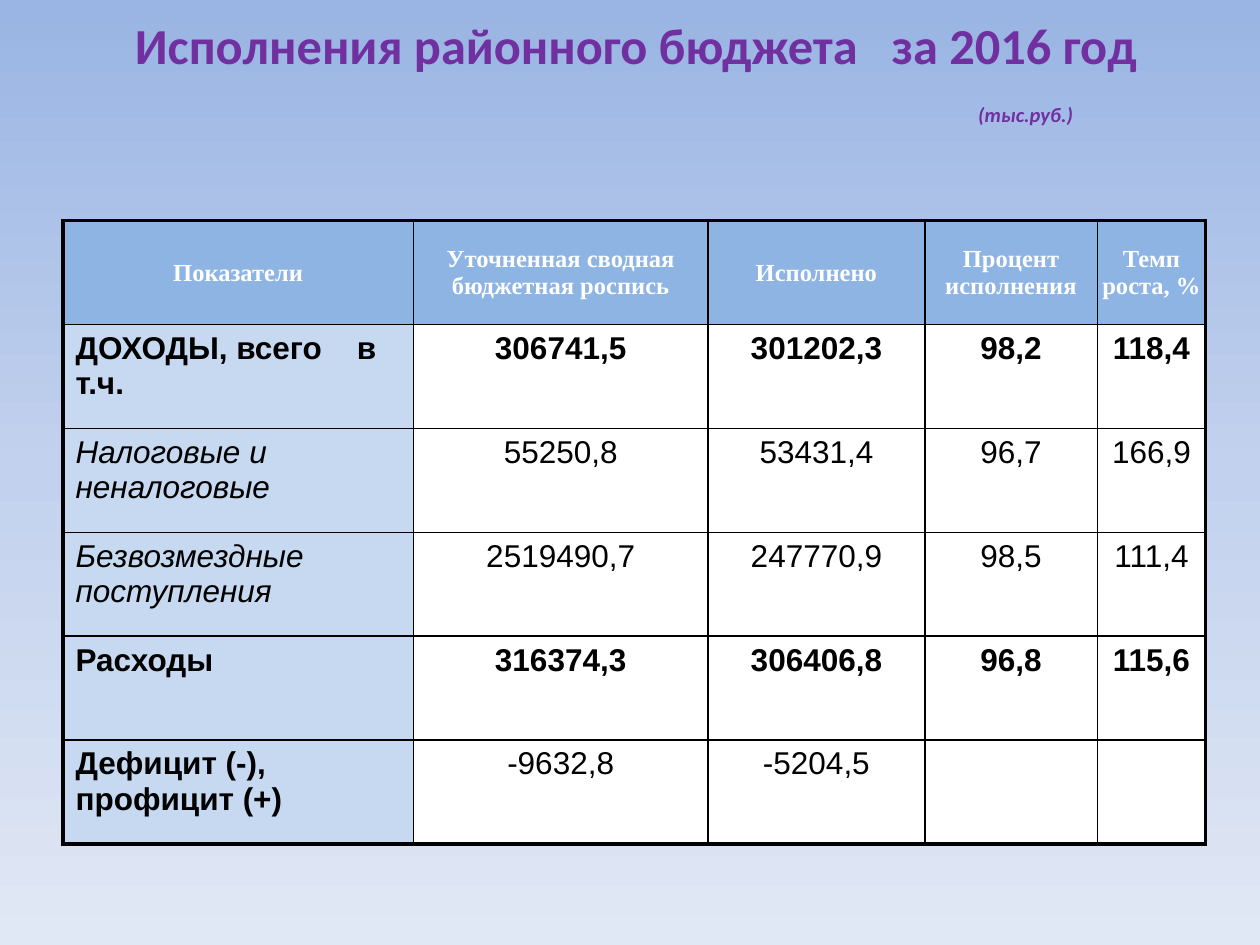
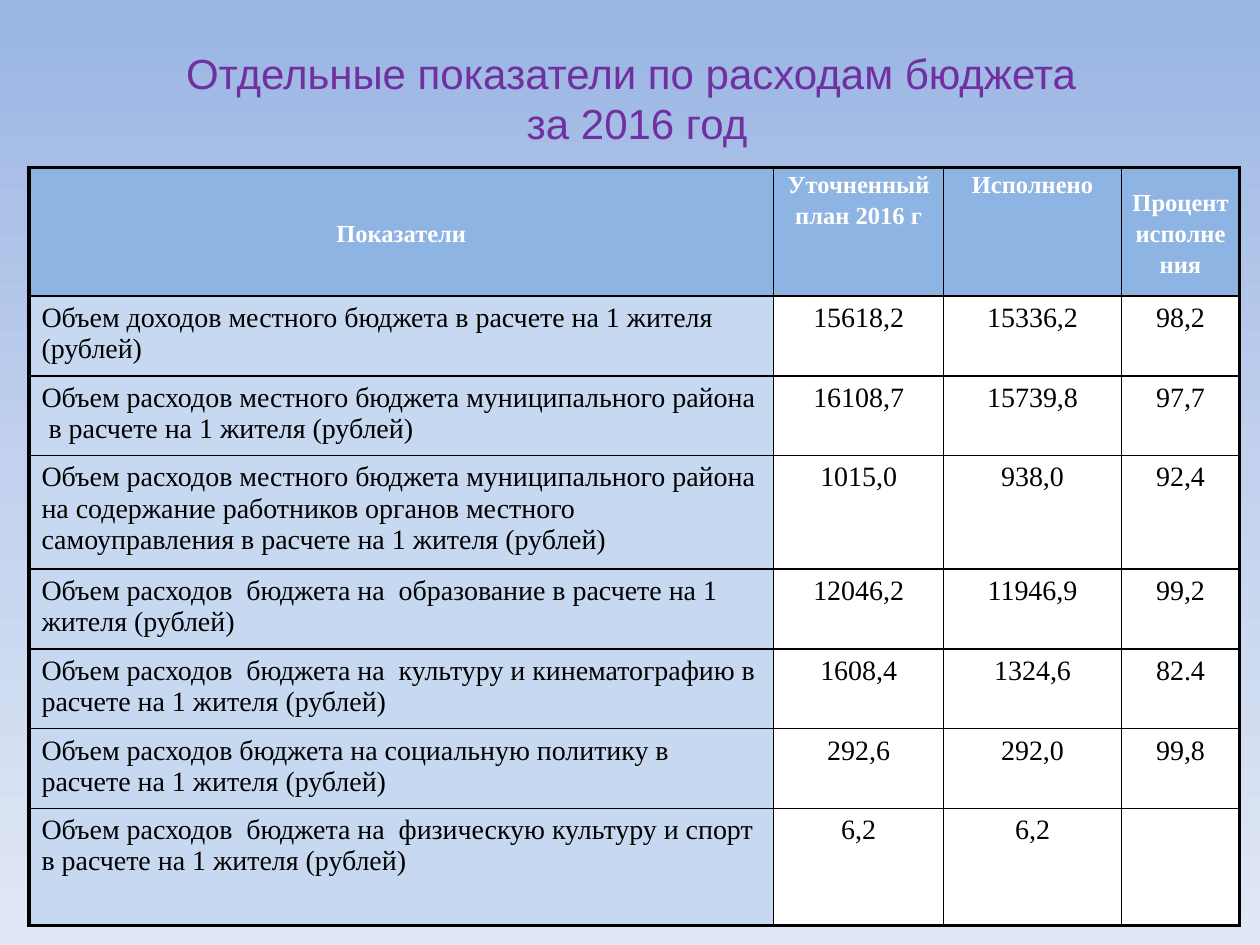
from lxml import etree
from pptx import Presentation
from pptx.dml.color import RGBColor
from pptx.enum.text import MSO_ANCHOR, PP_ALIGN
from pptx.oxml.ns import qn
from pptx.util import Inches, Pt

MID, TOP = MSO_ANCHOR.MIDDLE, MSO_ANCHOR.TOP
LEFT, CENTER = PP_ALIGN.LEFT, PP_ALIGN.CENTER

PURPLE = RGBColor(0x70, 0x30, 0xA0)
BLACK = RGBColor(0, 0, 0)
WHITE = RGBColor(0xFF, 0xFF, 0xFF)
BLUE = RGBColor(0x8E, 0xB4, 0xE3)
PALE = RGBColor(0xC6, 0xD9, 0xF1)
SKY = [(0, RGBColor(0x9A, 0xB5, 0xE4)),
       (50, RGBColor(0xC2, 0xD1, 0xED)),
       (100, RGBColor(0xE1, 0xE8, 0xF5))]

SANS, SERIF, ROUND = "Arial", "Times New Roman", "Calibri"
THICK, THIN = Pt(2.25), Pt(1)

BUDGET = [
    ("Показатели", "Уточненная сводная бюджетная роспись", "Исполнено",
     "Процент исполнения", "Темп роста, %"),
    ("ДОХОДЫ, всего    в т.ч.", "306741,5", "301202,3", "98,2", "118,4"),
    ("Налоговые и неналоговые", "55250,8", "53431,4", "96,7", "166,9"),
    ("Безвозмездные поступления", "2519490,7", "247770,9", "98,5", "111,4"),
    ("Расходы", "316374,3", "306406,8", "96,8", "115,6"),
    ("Дефицит (-), профицит (+)", "-9632,8", "-5204,5", "", ""),
]
TOTALS = (1, 4)
PARTS = (2, 3)
BALANCE = 5

COSTS = [
    ("Показатели", "Уточненный план 2016 г", "Исполнено", "Процент исполнения"),
    ("Объем доходов местного бюджета в расчете на 1 жителя (рублей)",
     "15618,2", "15336,2", "98,2"),
    ("Объем расходов местного бюджета муниципального района  в расчете "
     "на 1 жителя (рублей)", "16108,7", "15739,8", "97,7"),
    ("Объем расходов местного бюджета муниципального района на содержание "
     "работников органов местного самоуправления в расчете на 1 жителя (рублей)",
     "1015,0", "938,0", "92,4"),
    ("Объем расходов  бюджета на  образование в расчете на 1 жителя (рублей)",
     "12046,2", "11946,9", "99,2"),
    ("Объем расходов  бюджета на  культуру и кинематографию в расчете "
     "на 1 жителя (рублей)", "1608,4", "1324,6", "82.4"),
    ("Объем расходов бюджета на социальную политику в расчете "
     "на 1 жителя (рублей)", "292,6", "292,0", "99,8"),
    ("Объем расходов  бюджета на  физическую культуру и спорт в расчете "
     "на 1 жителя (рублей)", "6,2", "6,2", ""),
]


def add_run(para, text, font, size, color, bold=False, italic=False):
    run = para.add_run()
    run.text = text
    run.font.name = font
    run.font.size = Pt(size)
    run.font.color.rgb = color
    run.font.bold = bold
    run.font.italic = italic


def add_slide(deck):
    slide = deck.slides.add_slide(deck.slide_layouts[6])
    fill = slide.background.fill
    fill.gradient()
    fill.gradient_angle = 270
    stops = slide.element.find(".//" + qn("a:gsLst"))
    for stop in list(stops):
        stops.remove(stop)
    for pos, color in SKY:
        stop = etree.SubElement(stops, qn("a:gs"), pos=str(pos * 1000))
        etree.SubElement(stop, qn("a:srgbClr"), val=str(color))
    return slide


def add_title(slide, box, lines, font, size, **style):
    frame = slide.shapes.add_textbox(*map(Inches, box)).text_frame
    frame.word_wrap = True
    frame.vertical_anchor = MID
    para = frame.paragraphs[0]
    para.alignment = CENTER
    for num, line in enumerate(lines):
        if num:
            para.add_line_break()
        add_run(para, line, font, size, PURPLE, **style)


def add_edges(cell, row, col, rows, cols):
    outer = {"L": col == 0, "R": col == cols - 1,
             "T": row == 0, "B": row == rows - 1}
    props = cell._tc.get_or_add_tcPr()
    for side, edge in outer.items():
        line = etree.SubElement(props, qn("a:ln" + side),
                                w=str(THICK if edge else THIN))
        fill = etree.SubElement(line, qn("a:solidFill"))
        etree.SubElement(fill, qn("a:srgbClr"), val=str(BLACK))


def add_grid(slide, spot, data, widths, heights, head, body):
    rows, cols = len(data), len(widths)
    size = (sum(widths), sum(heights))
    grid = slide.shapes.add_table(rows, cols, *map(Inches, spot + size)).table
    grid.first_row = grid.horz_banding = False
    for col, width in zip(grid.columns, widths):
        col.width = Inches(width)
    for line, height in zip(grid.rows, heights):
        line.height = Inches(height)
    for row, texts in enumerate(data):
        for col, text in enumerate(texts):
            cell = grid.cell(row, col)
            add_edges(cell, row, col, rows, cols)
            cell.fill.solid()
            cell.fill.fore_color.rgb = BLUE if row == 0 else WHITE if col else PALE
            para = cell.text_frame.paragraphs[0]
            para.alignment = CENTER if col or row == 0 else LEFT
            if row == 0:
                head(cell, para, col)
                add_run(para, text, SERIF, 14, WHITE, bold=True)
            elif text:
                add_run(para, text, color=BLACK, **body(row, col))


def budget_head(cell, para, col):
    cell.vertical_anchor = MID
    pad = Inches(0.01 if col < 4 else 0)
    cell.margin_left = cell.margin_right = cell.margin_top = pad
    cell.margin_bottom = 0


def budget_body(row, col):
    bold = row in TOTALS or (row == BALANCE and col == 0)
    return dict(font=SANS, size=18, bold=bold, italic=row in PARTS and col == 0)


def cost_head(cell, para, col):
    cell.vertical_anchor = MID if col in (0, 3) else TOP
    cell.margin_left = cell.margin_right = Inches(0.07)
    cell.margin_top = cell.margin_bottom = 0
    para.line_spacing = 1.15


def cost_body(row, col):
    return dict(font=SERIF, size=16)


def add_budget(deck):
    slide = add_slide(deck)
    add_title(slide, (0.55, 0.08, 9, 0.55),
              ["Исполнения районного бюджета   за 2016 год"], ROUND, 28.8, bold=True)
    add_title(slide, (7.39, 0.74, 1.5, 0.34), ["(тыс.руб.)"], ROUND, 11.7,
              bold=True, italic=True)
    add_grid(slide, (0.5, 1.75), BUDGET, (2.78, 2.34, 1.72, 1.37, 0.86),
             [0.825] * len(BUDGET), budget_head, budget_body)


def add_costs(deck):
    slide = add_slide(deck)
    add_title(slide, (0.51, 0, 9, 1.55),
              ["Отдельные показатели по расходам бюджета", " за 2016 год"], SANS, 24)
    add_grid(slide, (0.23, 1.33), COSTS, (5.91, 1.35, 1.41, 0.94),
             (1.02, 0.61, 0.61, 0.87, 0.61, 0.63, 0.61, 0.93), cost_head, cost_body)


def main():
    deck = Presentation()
    deck.slide_width, deck.slide_height = Inches(10), Inches(7.5)
    add_budget(deck)
    add_costs(deck)
    deck.save("out.pptx")


if __name__ == "__main__":
    main()
